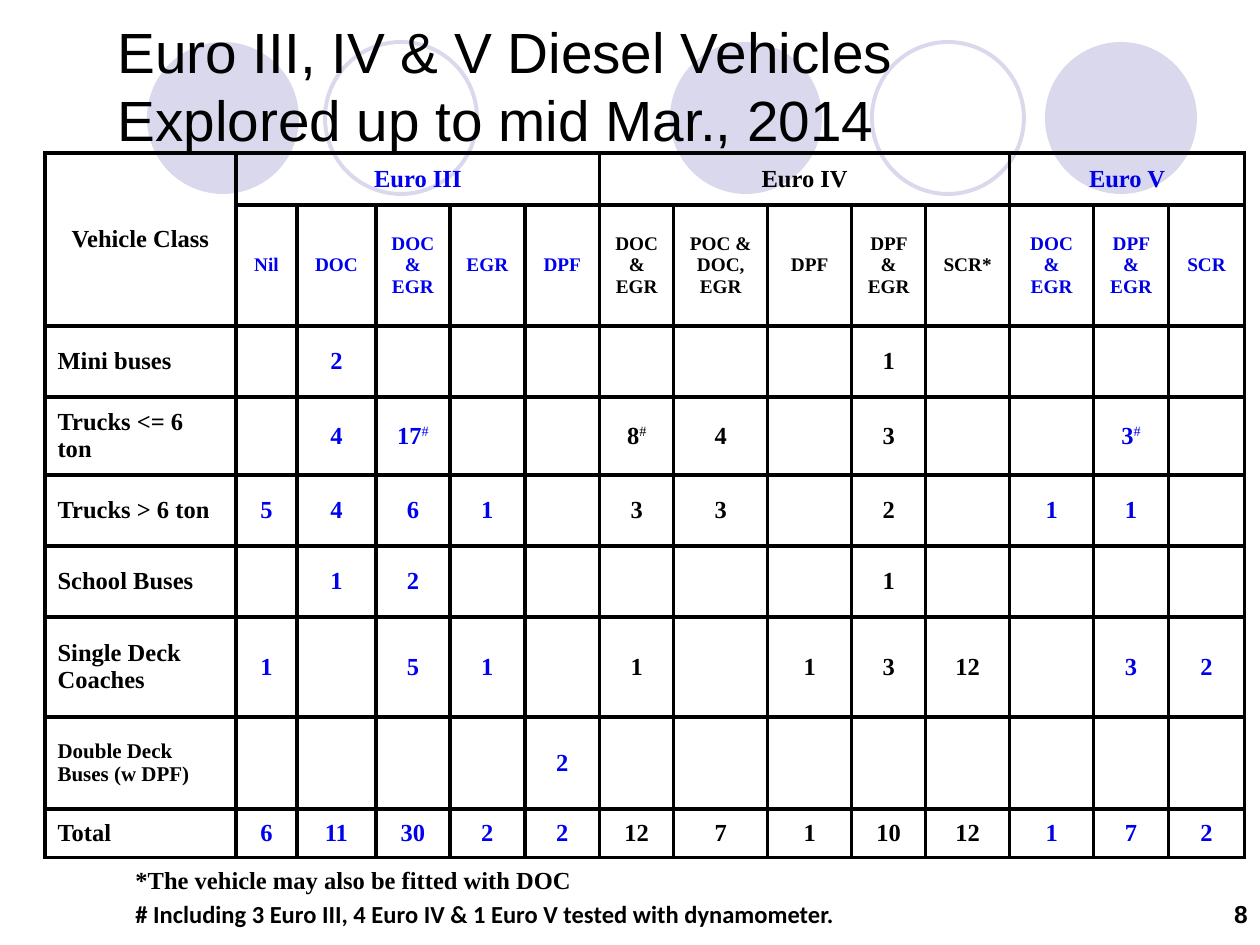
from lxml.etree import SubElement as Sub
from pptx import Presentation
from pptx.dml.color import RGBColor as RGB
from pptx.enum.shapes import MSO_SHAPE as Shape
from pptx.enum.text import MSO_ANCHOR as Anchor, MSO_AUTO_SIZE as Auto, PP_ALIGN as Align
from pptx.oxml.ns import qn
from pptx.util import Pt

PX = 914400 / 126
COLORS = {"black": "000000", "euro3": "0000F0", "euro5": "0000E6", "lilac": "D9D8EC"}
SERIF = "Times New Roman"


def px(*vals):
    """Turn pixel lengths into EMU."""
    return [round(v * PX) for v in vals]


def style(par, size, name=SERIF, color="black", bold=True, align=Align.LEFT):
    par.alignment = align
    font = par.font
    font.size, font.name, font.bold = Pt(size), name, bold
    font.color.rgb = RGB.from_string(COLORS[color])


prs = Presentation()
prs.slide_width, prs.slide_height = px(1260, 945)
slide = prs.slides.add_slide(prs.slide_layouts[5])
shapes = slide.shapes

# Row of circles behind the title
lilac = RGB.from_string(COLORS["lilac"])
for left, solid in [(147, True), (325, False), (670, True), (872, False), (1045, True)]:
    disc = shapes.add_shape(Shape.OVAL, *px(left, 42, 152, 152))
    disc.shadow.inherit = False
    if solid:
        disc.fill.solid()
        disc.fill.fore_color.rgb = lilac
        disc.line.fill.background()
    else:
        disc.fill.background()
        disc.line.color.rgb = lilac
        disc.line.width = Pt(2.25)

# Vehicle table: a label column, then the columns of each Euro group
widths = [191, 61, 79, 74, 75, 75, 74, 94, 84, 74, 84, 84, 75, 76]
heights = [52, 121, 71, 78, 71, 71, 100, 92, 49]
groups = [("Euro III", "euro3", 5), ("Euro IV", "black", 5), ("Euro V", "euro5", 3)]
tones = ["black"] + [tone for _, tone, span in groups for _ in range(span)]
rows = [
    ["Vehicle Class"] + [text for name, _, span in groups for text in [name] + [""] * (span - 1)],
    ["", "Nil", "DOC", "DOC & EGR", "EGR", "DPF",
     "DOC & EGR", "POC & DOC, EGR", "DPF", "DPF & EGR", "SCR*",
     "DOC & EGR", "DPF & EGR", "SCR"],
    ["Mini buses", "", "2", "", "", "", "", "", "", "1", "", "", "", ""],
    ["Trucks <= 6 ton", "", "4", "17#", "", "", "8#", "4", "", "3", "", "", "3#", ""],
    ["Trucks > 6 ton", "5", "4", "6", "1", "", "3", "3", "", "2", "", "1", "1", ""],
    ["School Buses", "", "1", "2", "", "", "", "", "", "1", "", "", "", ""],
    ["Single Deck Coaches", "1", "", "5", "1", "", "1", "", "1", "3", "12", "", "3", "2"],
    ["Double Deck Buses (w DPF)", "", "", "", "", "2", "", "", "", "", "", "", "", ""],
    ["Total", "6", "11", "30", "2", "2", "12", "7", "1", "10", "12", "1", "7", "2"],
]
table = shapes.add_table(len(rows), len(widths),
                         *px(45, 153, sum(widths), sum(heights))).table
table.first_row = table.horz_banding = False
for col, width in zip(table.columns, px(*widths)):
    col.width = width
for row, height in zip(table.rows, px(*heights)):
    row.height = height

table.cell(0, 0).merge(table.cell(1, 0))
start = 1
for _, _, span in groups:
    table.cell(0, start).merge(table.cell(0, start + span - 1))
    start += span

for r, row in enumerate(rows):
    for c, text in enumerate(row):
        cell = table.cell(r, c)
        cell.vertical_anchor = Anchor.MIDDLE
        par = cell.text_frame.paragraphs[0]
        size = 11 if r == 1 else 12 if (r, c) == (7, 0) else 14
        align = Align.LEFT if c == 0 and r > 1 else Align.CENTER
        style(par, size, color=tones[c], align=align)
        value, mark, _ = text.partition("#")
        if value:
            par.add_run().text = value
        if mark:
            note = par.add_run()
            note.text = mark
            note.font.bold = False
            note.font._element.set("baseline", "30000")
        props = cell._tc.get_or_add_tcPr()
        for side in ("a:lnL", "a:lnR", "a:lnT", "a:lnB"):
            line = Sub(props, qn(side), w=str(Pt(2.25)))
            fill = Sub(line, qn("a:solidFill"))
            Sub(fill, qn("a:srgbClr"), val=COLORS["black"])
        cell.fill.background()

# Title, brought in front of the circles and the table
title = shapes.title
title.left, title.top, title.width, title.height = px(105, 6, 1134, 158)
frame = title.text_frame
frame.text = "Euro III, IV & V Diesel Vehicles \vExplored up to mid Mar., 2014"
frame.auto_size = Auto.NONE
frame.vertical_anchor = Anchor.MIDDLE
style(frame.paragraphs[0], 32.4, "Arial", bold=False)
shapes._spTree.append(title._element)

# Page number and footnotes
for text, box, name, align in [
    ("8", (966, 893, 294, 66), "Arial", Align.RIGHT),
    ("*The vehicle may also be fitted with DOC", (123, 859, 873, 43), SERIF, Align.LEFT),
    ("# Including 3 Euro III, 4 Euro IV & 1 Euro V tested with dynamometer.",
     (123, 893, 767, 43), "Calibri", Align.LEFT),
]:
    frame = shapes.add_textbox(*px(*box)).text_frame
    frame.word_wrap = True
    frame.text = text
    style(frame.paragraphs[0], 14, name, align=align)

prs.save("out.pptx")
